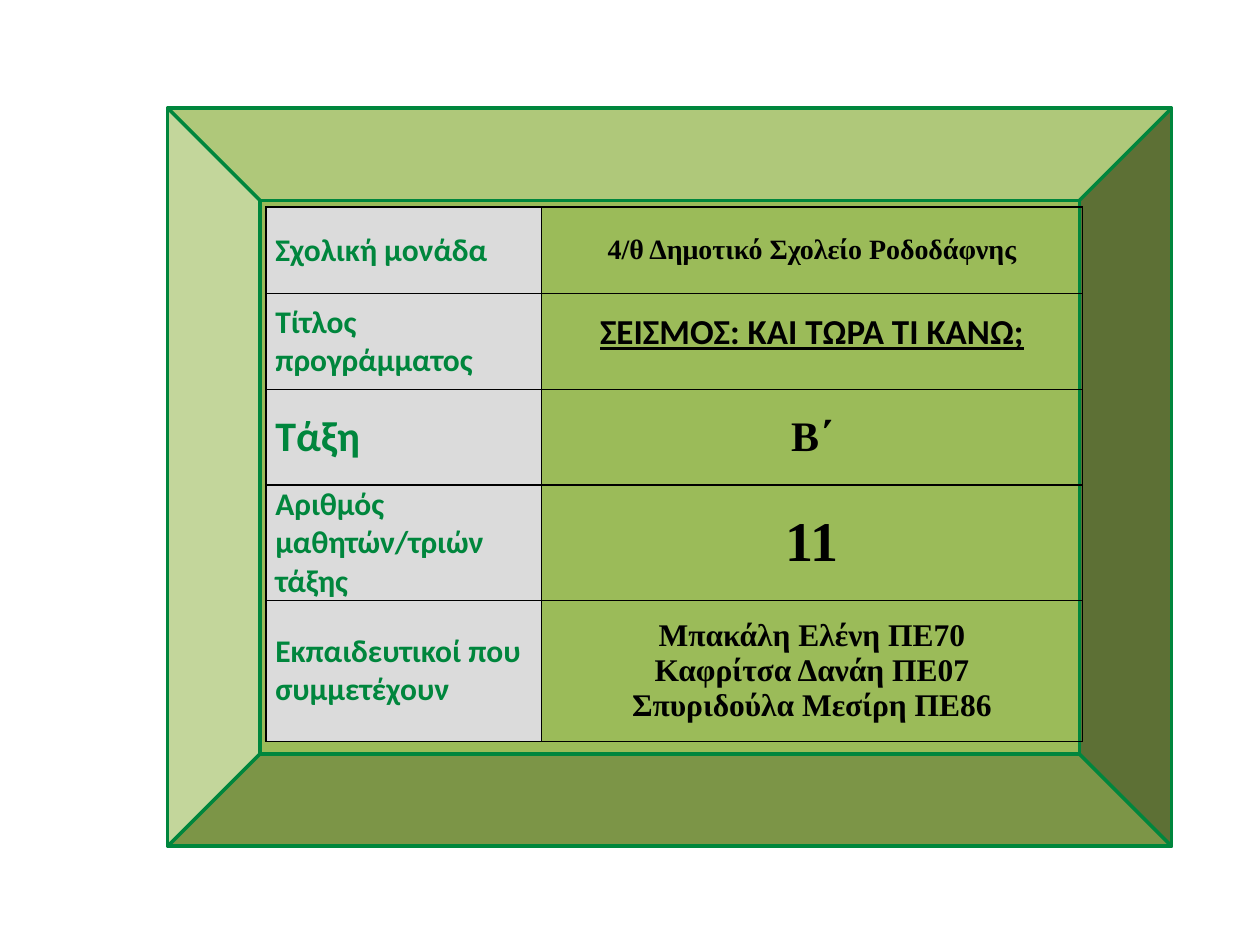
"""Build a slide with a school programme table framed by a green bevel."""
from dataclasses import dataclass

import pptx
import pptx.dml.color
import pptx.enum.shapes
import pptx.enum.text
import pptx.oxml
import pptx.oxml.ns
import pptx.slide
import pptx.table
import pptx.util
from pptx.dml.color import RGBColor
from pptx.util import Cm

GREEN = RGBColor(0x00, 0x86, 0x3D)
OLIVE = RGBColor(0x9B, 0xBB, 0x59)
GREY = RGBColor(0xDB, 0xDB, 0xDB)
BLACK = RGBColor(0x00, 0x00, 0x00)

SANS = "Calibri"
SERIF = "Times New Roman"
COLUMN_WIDTHS = (Cm(5.56), Cm(10.9))


@dataclass(frozen=True)
class CellText:
    text: str
    size: float
    font: str = SERIF
    colour: RGBColor = BLACK
    centred: bool = True
    underlined: bool = False
    line_spacing: float | None = None


@dataclass(frozen=True)
class Entry:
    label: str
    label_size: float
    value: CellText
    height: pptx.util.Length


ENTRIES = (
    Entry("Σχολική μονάδα", 18, CellText("4/θ Δημοτικό Σχολείο Ροδοδάφνης", 16), Cm(1.75)),
    Entry(
        "Τίτλος προγράμματος",
        18,
        CellText("ΣΕΙΣΜΟΣ: ΚΑΙ ΤΩΡΑ ΤΙ ΚΑΝΩ;", 20, SANS, underlined=True, line_spacing=14.7),
        Cm(1.93),
    ),
    Entry("Τάξη", 24, CellText("Β΄", 24), Cm(1.93)),
    Entry("Αριθμός μαθητών/τριών τάξης", 18, CellText("11", 32), Cm(2.08)),
    Entry(
        "Εκπαιδευτικοί που συμμετέχουν",
        18,
        CellText("Μπακάλη Ελένη ΠΕ70\nΚαφρίτσα Δανάη ΠΕ07\nΣπυριδούλα Μεσίρη ΠΕ86", 18),
        Cm(2.84),
    ),
)


def draw_frame(page: pptx.slide.Slide) -> None:
    frame = page.shapes.add_shape(
        pptx.enum.shapes.MSO_SHAPE.BEVEL, Cm(3.38), Cm(2.18), Cm(20.24), Cm(14.88)
    )
    frame.shadow.inherit = False
    frame.fill.solid()
    frame.fill.fore_color.rgb = OLIVE
    frame.line.color.rgb = GREEN
    frame.line.width = pptx.util.Pt(2)


def draw_borders(cell: pptx.table._Cell) -> None:
    properties = cell._tc.get_or_add_tcPr()
    for position, side in enumerate(("lnL", "lnR", "lnT", "lnB")):
        border = pptx.oxml.parse_xml(
            f'<a:{side} {pptx.oxml.ns.nsdecls("a")} w="{pptx.util.Pt(1)}">'
            f'<a:solidFill><a:srgbClr val="{BLACK}"/></a:solidFill></a:{side}>'
        )
        properties.insert(position, border)


def write_cell(cell: pptx.table._Cell, content: CellText, fill: RGBColor | None) -> None:
    cell.margin_left = cell.margin_right = Cm(0.19)
    cell.margin_top = cell.margin_bottom = Cm(0)
    cell.vertical_anchor = pptx.enum.text.MSO_ANCHOR.MIDDLE
    if fill is None:
        cell.fill.background()
    else:
        cell.fill.solid()
        cell.fill.fore_color.rgb = fill
    draw_borders(cell)
    cell.text_frame.text = content.text
    alignment = pptx.enum.text.PP_ALIGN
    for paragraph in cell.text_frame.paragraphs:
        paragraph.alignment = alignment.CENTER if content.centred else alignment.LEFT
        if content.line_spacing is not None:
            paragraph.line_spacing = pptx.util.Pt(content.line_spacing)
        for span in paragraph.runs:
            span.font.name = content.font
            span.font.size = pptx.util.Pt(content.size)
            span.font.bold = True
            span.font.underline = content.underlined
            span.font.color.rgb = content.colour


def draw_table(page: pptx.slide.Slide) -> None:
    table = page.shapes.add_table(
        len(ENTRIES),
        len(COLUMN_WIDTHS),
        Cm(5.36),
        Cm(4.17),
        sum(COLUMN_WIDTHS),
        sum(entry.height for entry in ENTRIES),
    ).table
    table.first_row = False
    table.horz_banding = False
    for column, width in zip(table.columns, COLUMN_WIDTHS):
        column.width = width
    for row, entry in zip(table.rows, ENTRIES):
        row.height = entry.height
        label = CellText(entry.label, entry.label_size, SANS, GREEN, centred=False)
        write_cell(row.cells[0], label, GREY)
        write_cell(row.cells[1], entry.value, None)


def main() -> None:
    deck = pptx.Presentation()
    deck.slide_width = Cm(25.4)
    deck.slide_height = Cm(19.05)
    page = deck.slides.add_slide(deck.slide_layouts[6])
    draw_frame(page)
    draw_table(page)
    deck.save("out.pptx")


if __name__ == "__main__":
    main()
